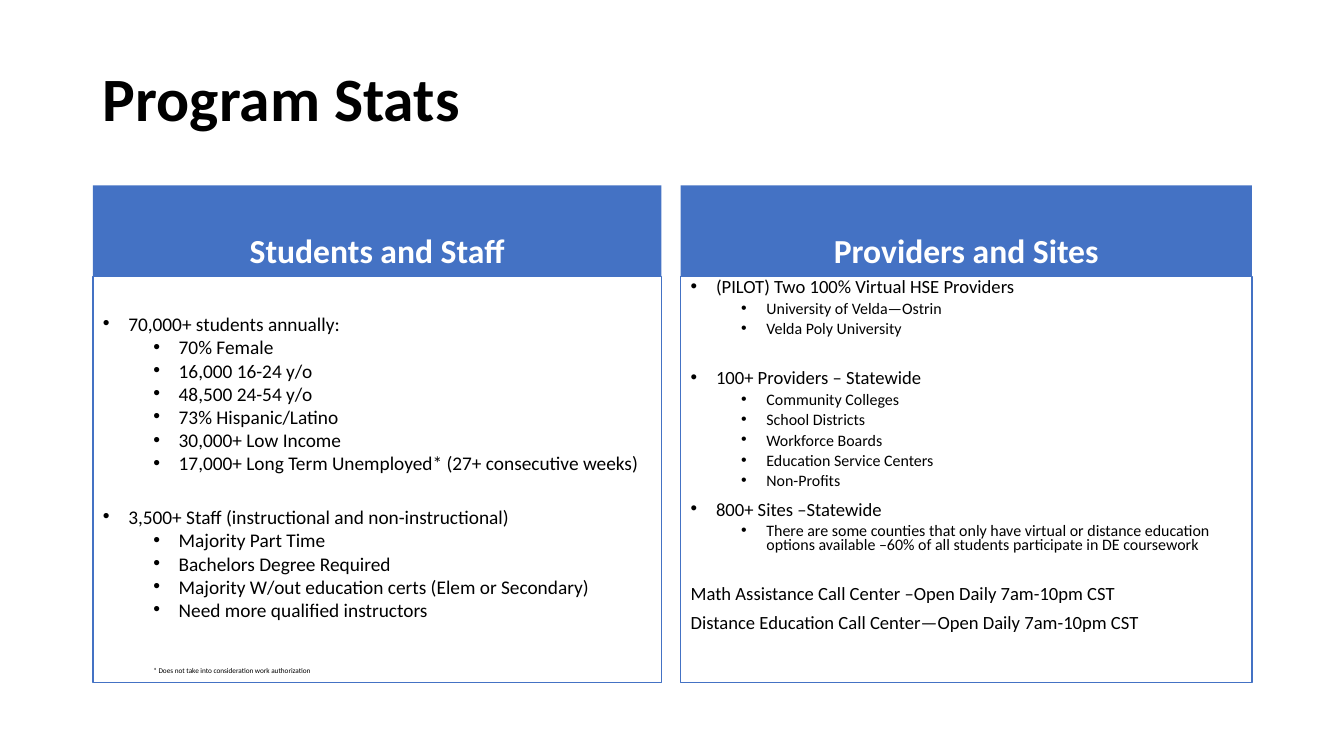
from dataclasses import dataclass

from lxml.etree import SubElement
from pptx import Presentation
from pptx.dml.color import RGBColor
from pptx.enum.text import MSO_ANCHOR as Anchor, MSO_AUTO_SIZE as AutoSize, PP_ALIGN as Align
from pptx.oxml.ns import qn
from pptx.util import Cm, Pt


@dataclass(frozen=True)
class Theme:
    font: str = "Calibri"
    black: RGBColor = RGBColor(0x00, 0x00, 0x00)
    white: RGBColor = RGBColor(0xFF, 0xFF, 0xFF)
    blue: RGBColor = RGBColor(0x44, 0x72, 0xC4)
    title: float = 44
    header: float = 24
    student: float = 13.8
    provider: float = 13.3
    provider_detail: float = 11.4
    footnote: float = 5.2


THEME = Theme()

# Kinds of list line: level, left margin, first-line indent, bullet
POINT = (0, Cm(0.64), Cm(-0.64), True)
DETAIL = (1, Cm(1.91), Cm(-0.64), True)
PLAIN = (0, Cm(0), Cm(0), False)
NOTE = (1, Cm(1.27), Cm(0), False)

# Space before a line, in points
POINT_GAP, DETAIL_GAP = 10, 5
STUDENT_BREAK, PROVIDER_BREAK, NOTE_BREAK = 26.8, 24.7, 34.5

# Shared rows of the two panels
HEADER_TOP, HEADER_HEIGHT = Cm(4.67), Cm(2.29)
LIST_TOP, LIST_HEIGHT = HEADER_TOP + HEADER_HEIGHT, Cm(10.24)


def place(shape, left, top, width, height):
    shape.left, shape.top, shape.width, shape.height = left, top, width, height
    shape.text_frame.auto_size = AutoSize.NONE
    shape.text_frame.word_wrap = True


def format_runs(paragraph, size, color, bold=False):
    for run in paragraph.runs:
        run.font.name = THEME.font
        run.font.size = Pt(size)
        run.font.bold = bold
        run.font.color.rgb = color


def fill_heading(shape, text, size, color, align, anchor):
    text_frame = shape.text_frame
    text_frame.text = text
    text_frame.vertical_anchor = anchor
    paragraph = text_frame.paragraphs[0]
    paragraph.alignment = align
    paragraph.line_spacing = 0.9
    format_runs(paragraph, size, color, bold=True)


def set_bullet(paragraph, margin, indent, bulleted):
    properties = paragraph._p.get_or_add_pPr()
    properties.set("marL", str(margin))
    properties.set("indent", str(indent))
    if bulleted:
        SubElement(properties, qn("a:buFont")).set("typeface", "Arial")
        SubElement(properties, qn("a:buChar")).set("char", "•")
    else:
        SubElement(properties, qn("a:buNone"))


def fill_list(shape, lines):
    text_frame = shape.text_frame
    text_frame.vertical_anchor = Anchor.TOP
    text_frame.text = "\n".join(text for text, *_ in lines)
    for paragraph, (_, kind, size, gap) in zip(text_frame.paragraphs, lines):
        level, margin, indent, bulleted = kind
        paragraph.level = level
        paragraph.line_spacing = 0.7
        paragraph.space_before = Pt(gap)
        set_bullet(paragraph, margin, indent, bulleted)
        format_runs(paragraph, size, THEME.black)


def group(heading, details, size, detail_size, gap=POINT_GAP):
    """Lines for one bulleted point and the details below it."""
    return [(heading, POINT, size, gap)] + [
        (detail, DETAIL, detail_size, DETAIL_GAP) for detail in details
    ]


def build_panel(header, body, left, width, heading, lines):
    place(header, left, HEADER_TOP, width, HEADER_HEIGHT)
    header.fill.solid()
    header.fill.fore_color.rgb = THEME.blue
    fill_heading(header, heading, THEME.header, THEME.white, Align.CENTER, Anchor.BOTTOM)

    place(body, left, LIST_TOP, width, LIST_HEIGHT)
    body.fill.solid()
    body.fill.fore_color.rgb = THEME.white
    body.line.color.rgb = THEME.blue
    body.line.width = Pt(1)
    fill_list(body, lines)


def student_lines():
    size = THEME.student
    return (
        group("70,000+ students annually:", [
            "70% Female",
            "16,000 16-24 y/o",
            "48,500 24-54 y/o",
            "73% Hispanic/Latino",
            "30,000+ Low Income",
            "17,000+ Long Term Unemployed* (27+ consecutive weeks)",
        ], size, size)
        + group("3,500+ Staff (instructional and non-instructional)", [
            "Majority Part Time",
            "Bachelors Degree Required",
            "Majority W/out education certs (Elem or Secondary)",
            "Need more qualified instructors",
        ], size, size, STUDENT_BREAK)
        + [("* Does not take into consideration work authorization",
            NOTE, THEME.footnote, NOTE_BREAK)]
    )


def provider_lines():
    size, detail_size = THEME.provider, THEME.provider_detail
    return (
        group("(PILOT) Two 100% Virtual HSE Providers", [
            "University of Velda—Ostrin",
            "Velda Poly University",
        ], size, detail_size)
        + group("100+ Providers – Statewide", [
            "Community Colleges",
            "School Districts",
            "Workforce Boards",
            "Education Service Centers",
            "Non-Profits",
        ], size, detail_size, PROVIDER_BREAK)
        + group("800+ Sites –Statewide", [
            "There are some counties that only have virtual or distance education "
            "options available –60% of all students participate in DE coursework",
        ], size, detail_size)
        + [
            ("Math Assistance Call Center –Open Daily 7am-10pm CST",
             PLAIN, size, PROVIDER_BREAK),
            ("Distance Education Call Center—Open Daily 7am-10pm CST",
             PLAIN, size, POINT_GAP),
        ]
    )


def main():
    presentation = Presentation()
    presentation.slide_width, presentation.slide_height = Cm(33.87), Cm(19.05)
    comparison_layout = presentation.slide_layouts.get_by_name("Comparison")
    slide = presentation.slides.add_slide(comparison_layout)
    title, left_header, left_body, right_header, right_body = slide.placeholders

    # Title
    place(title, Cm(2.34), Cm(1.02), Cm(29.21), Cm(3.1))
    fill_heading(title, "Program Stats", THEME.title, THEME.black, Align.LEFT, Anchor.MIDDLE)

    # Two panels; the left list starts lower
    build_panel(left_header, left_body, Cm(2.34), Cm(14.33),
                "Students and Staff", student_lines())
    left_body.text_frame.margin_top = Cm(1.07)
    build_panel(right_header, right_body, Cm(17.15), Cm(14.4),
                "Providers and Sites", provider_lines())

    presentation.save("out.pptx")


if __name__ == "__main__":
    main()
